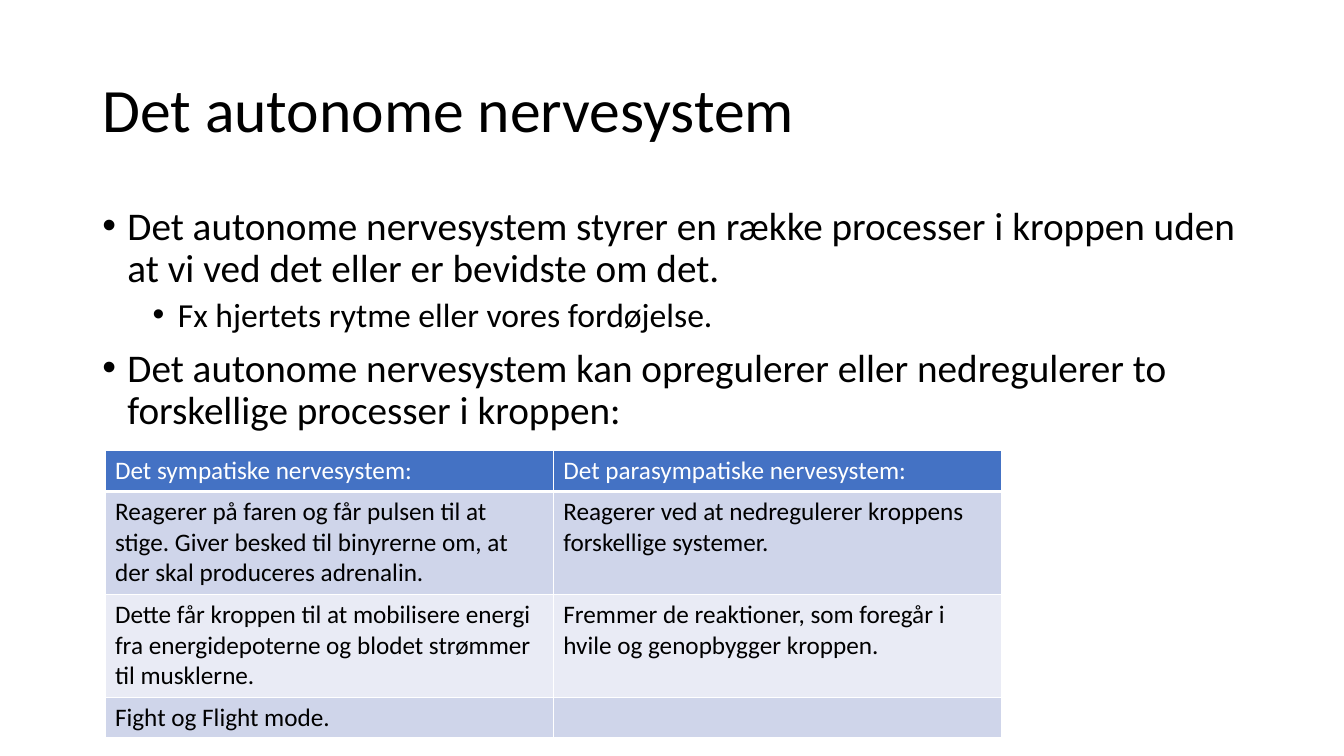
from typing import NamedTuple

from pptx import Presentation
from pptx.dml.color import RGBColor
from pptx.enum.text import MSO_ANCHOR as Anchor
from pptx.oxml.ns import qn
from pptx.util import Emu, Pt
from lxml.etree import SubElement

PX = 9525  # 96 px to the inch
FONT = "Calibri"
COLORS = {
    "text": "000000",
    "line": "FFFFFF",
    "header": "4472C4",
    "odd_row": "CFD5EA",
    "even_row": "E9EBF5",
}


class Area(NamedTuple):
    left: int
    top: int
    width: int
    height: int


class Bullet(NamedTuple):
    text: str
    level: int


class Level(NamedTuple):
    size: int
    indent: int
    space_before: int


class Row(NamedTuple):
    height: int
    fill: str
    color: str
    texts: tuple[str, str]


TITLE = "Det autonome nervesystem"
TITLE_AREA = Area(88, 38, 1104, 139)
BODY_AREA = Area(88, 192, 1104, 457)
TABLE_AREA = Area(100, 429, 854, 274)
HANGING = 24

LEVELS = [Level(28, 24, 10), Level(24, 72, 5)]
BULLETS = [
    Bullet("Det autonome nervesystem styrer en række processer i kroppen uden "
           "at vi ved det eller er bevidste om det.", 0),
    Bullet("Fx hjertets rytme eller vores fordøjelse.", 1),
    Bullet("Det autonome nervesystem kan opregulerer eller nedregulerer to "
           "forskellige processer i kroppen:", 0),
]
ROWS = [
    Row(39, "header", "line",
        ("Det sympatiske nervesystem:", "Det parasympatiske nervesystem:")),
    Row(98, "odd_row", "text",
        ("Reagerer på faren og får pulsen til at stige. Giver besked til "
         "binyrerne om, at der skal produceres adrenalin.",
         "Reagerer ved at nedregulerer kroppens forskellige systemer.")),
    Row(98, "even_row", "text",
        ("Dette får kroppen til at mobilisere energi fra energidepoterne og "
         "blodet strømmer til musklerne.",
         "Fremmer de reaktioner, som foregår i hvile og genopbygger kroppen.")),
    Row(39, "odd_row", "text", ("Fight og Flight mode.", "")),
]


def emu(area: Area) -> list[Emu]:
    return [Emu(value * PX) for value in area]


def style_runs(para, size: int, color: str = "text") -> None:
    for span in para.runs:
        span.font.name = FONT
        span.font.size = Pt(size)
        span.font.bold = False
        span.font.color.rgb = RGBColor.from_string(COLORS[color])


def add_box(page, area: Area):
    frame = page.shapes.add_textbox(*emu(area)).text_frame
    frame.word_wrap = True
    return frame


def add_title(page) -> None:
    frame = add_box(page, TITLE_AREA)
    frame.vertical_anchor = Anchor.MIDDLE
    frame.text = TITLE
    frame.paragraphs[0].line_spacing = 0.9
    style_runs(frame.paragraphs[0], 44)


def add_bullets(page) -> None:
    frame = add_box(page, BODY_AREA)
    for index, bullet in enumerate(BULLETS):
        para = frame.add_paragraph() if index else frame.paragraphs[0]
        level = LEVELS[bullet.level]
        para.text = bullet.text
        para.level = bullet.level
        para.line_spacing = 0.9
        para.space_before = Pt(level.space_before if index else 0)
        # Hanging indent and bullet sign
        properties = para._p.get_or_add_pPr()
        properties.set("marL", str(level.indent * PX))
        properties.set("indent", str(-HANGING * PX))
        SubElement(properties, qn("a:buFont"), typeface="Arial")
        SubElement(properties, qn("a:buChar"), char="•")
        style_runs(para, level.size)


def add_borders(cell, top: int, bottom: int) -> None:
    properties = cell._tc.get_or_add_tcPr()
    for side, points in (("L", 1), ("R", 1), ("T", top), ("B", bottom)):
        line = SubElement(properties, qn(f"a:ln{side}"), w=str(Pt(points)))
        fill = SubElement(line, qn("a:solidFill"))
        SubElement(fill, qn("a:srgbClr"), val=COLORS["line"])


def add_comparison(page) -> None:
    table = page.shapes.add_table(len(ROWS), 2, *emu(TABLE_AREA)).table
    for index, row in enumerate(ROWS):
        table.rows[index].height = Emu(row.height * PX)
        for cell, text in zip(table.rows[index].cells, row.texts):
            cell.text = text
            style_runs(cell.text_frame.paragraphs[0], 18, row.color)
            # The rule under the header is thicker
            add_borders(cell, 3 if index == 1 else 1, 3 if index == 0 else 1)
            cell.fill.solid()
            cell.fill.fore_color.rgb = RGBColor.from_string(COLORS[row.fill])


def main() -> None:
    deck = Presentation()
    deck.slide_width, deck.slide_height = Emu(1280 * PX), Emu(720 * PX)
    page = deck.slides.add_slide(deck.slide_layouts[6])
    add_title(page)
    add_bullets(page)
    add_comparison(page)
    deck.save("out.pptx")


if __name__ == "__main__":
    main()
